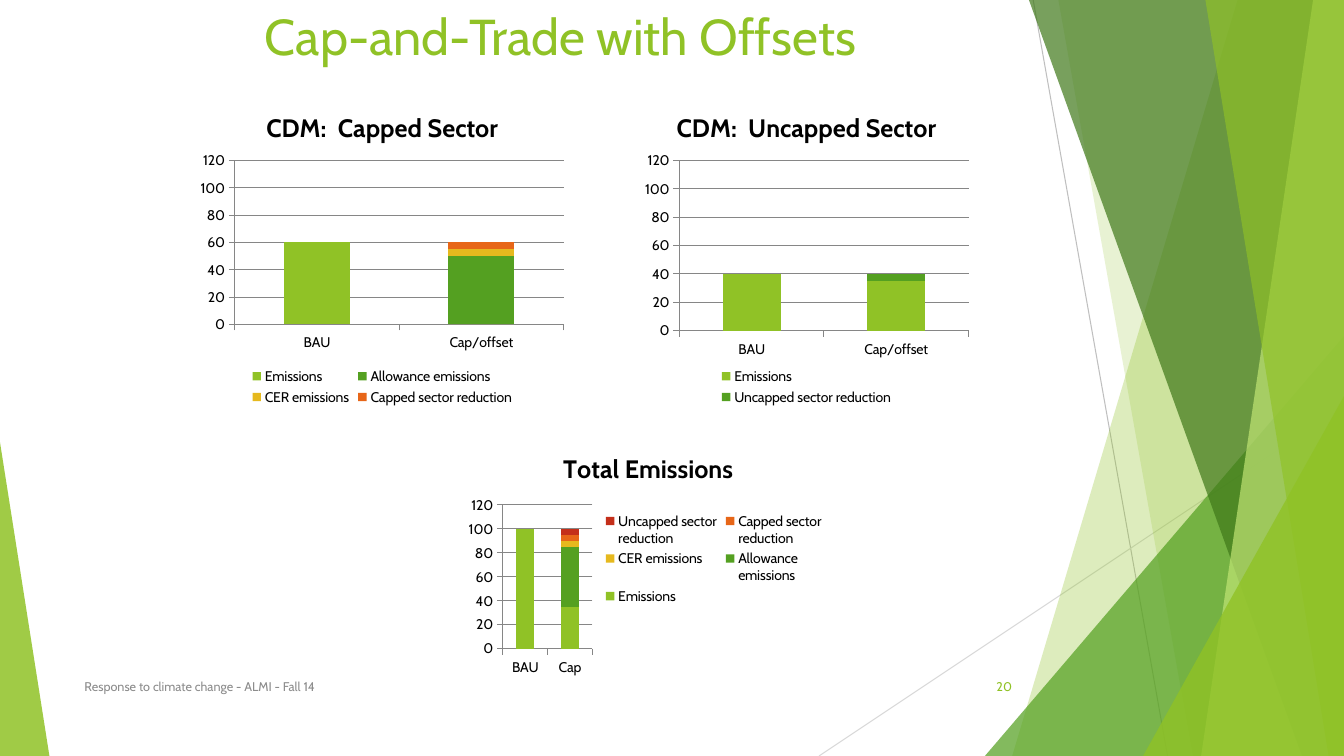
from lxml.etree import SubElement
from pptx import Presentation
from pptx.chart.data import CategoryChartData
from pptx.dml.color import RGBColor
from pptx.enum.chart import XL_CHART_TYPE as ChartType
from pptx.enum.chart import XL_LEGEND_POSITION as LegendPos
from pptx.enum.chart import XL_TICK_MARK as Tick
from pptx.enum.shapes import MSO_CONNECTOR as Connector
from pptx.enum.shapes import MSO_SHAPE as Shape
from pptx.enum.text import MSO_ANCHOR as Anchor
from pptx.enum.text import MSO_AUTO_SIZE as AutoSize
from pptx.enum.text import PP_ALIGN as Align
from pptx.oxml import parse_xml
from pptx.oxml.ns import qn
from pptx.util import Pt


class Theme:
    font = "Cabin"
    lime, green, forest, pale = "90C226", "54A021", "3F7819", "C0E474"
    gold, orange, red = "E6B91E", "E76618", "C42F1A"
    ink, footer, axis = "000000", "8C8C8C", "868686"
    ray_dark, ray_light = "BFBFBF", "D9D9D9"
    title_size, chart_title_size, chart_size, footer_size = 36, 18, 10, 9


WIDTH, HEIGHT = 960, 540
TITLE = ("Cap-and-Trade with Offsets", (182, 0, 486, 67.5))
FOOTER = ("Response to climate change - ALMI - Fall 14", (53.3, 476, 496, 28.8))
PAGE = ("20", (676, 476, 54, 28.8))

SERIES_COLORS = {
    "Emissions": Theme.lime,
    "Allowance emissions": Theme.green,
    "CER emissions": Theme.gold,
    "Capped sector reduction": Theme.orange,
    "Uncapped sector reduction": Theme.red,
}
# plot is in fractions of the chart: left, top, width, height
CHARTS = [
    dict(title="CDM:  Uncapped Sector", box=(450, 67.5, 252, 225),
         categories=("BAU", "Cap/offset"),
         series={"Emissions": (40, 35), "Uncapped sector reduction": (0, 5)},
         colors={"Uncapped sector reduction": Theme.green},
         plot=(0.14, 0.21, 0.82, 0.54), legend_side=LegendPos.BOTTOM),
    dict(title="CDM:  Capped Sector", box=(138, 67.5, 270, 225),
         categories=("BAU", "Cap/offset"),
         series={"Emissions": (60, 0), "Allowance emissions": (0, 50),
                 "CER emissions": (0, 5), "Capped sector reduction": (0, 5)},
         colors={},
         plot=(0.11, 0.21, 0.87, 0.52), legend_side=LegendPos.BOTTOM),
    dict(title="Total Emissions", box=(330, 312, 266, 174),
         categories=("BAU", "Cap"),
         series={"Emissions": (100, 35), "Allowance emissions": (0, 50),
                 "CER emissions": (0, 5), "Capped sector reduction": (0, 5),
                 "Uncapped sector reduction": (0, 5)},
         colors={},
         plot=(0.11, 0.28, 0.24, 0.59), legend_side=LegendPos.RIGHT),
]

RAYS = [((738, 0), (834, HEIGHT), Theme.ray_dark),
        ((WIDTH, 290), (585, HEIGHT), Theme.ray_light)]
# A band runs from its slanted left edge (top x, bottom x) to the right slide edge;
# a wedge is a right triangle on the bottom edge (left, top, width, apex position).
FACETS = [
    ("band", (884, 723), Theme.lime, 30),
    ("band", (756, 852), Theme.lime, 20),
    ("wedge", (703.5, 240, 256.5, 1), Theme.green, 72),
    ("band", (735, 929.5), Theme.forest, 70),
    ("band", (938, 858), Theme.pale, 70),
    ("band", (861, 949), Theme.lime, 65),
    ("wedge", (816.5, 283, 143.5, 1), Theme.lime, 80),
    ("wedge", (0, 316, 35.3, 0), Theme.lime, 85),
]


def rgb(code):
    return RGBColor.from_string(code)


def points(values):
    return [Pt(value) for value in values]


def set_font(font, size, color, bold=False):
    font.name, font.size, font.bold = Theme.font, Pt(size), bold
    font.color.rgb = rgb(color)


def add_ray(slide, start, end, color):
    ray = slide.shapes.add_connector(Connector.STRAIGHT, *points(start + end))
    ray.line.color.rgb, ray.line.width = rgb(color), Pt(0.75)
    SubElement(ray._element.spPr, qn("a:effectLst"))


def add_facet(slide, kind, geometry, color, opacity):
    if kind == "band":
        top_x, bottom_x = geometry
        builder = slide.shapes.build_freeform(top_x, 0, scale=Pt(1))
        builder.add_line_segments([(WIDTH, 0), (WIDTH, HEIGHT), (bottom_x, HEIGHT)])
        facet = builder.convert_to_shape()
    else:
        left, top, width, apex = geometry
        facet = slide.shapes.add_shape(
            Shape.ISOSCELES_TRIANGLE, *points((left, top, width, HEIGHT - top)))
        facet.adjustments[0] = apex
    facet.shadow.inherit = False
    facet.line.fill.background()
    facet.fill.solid()
    facet.fill.fore_color.rgb = rgb(color)
    solid = facet._element.spPr.find(qn("a:solidFill"))
    SubElement(solid[0], qn("a:alpha"), val=str(opacity * 1000))


def write(holder, text, size, color, anchor, align=Align.LEFT):
    frame = holder.text_frame
    frame.word_wrap, frame.auto_size = True, AutoSize.NONE
    frame.vertical_anchor = anchor
    line = frame.paragraphs[0]
    line.alignment = align
    run = line.add_run()
    run.text = text
    set_font(run.font, size, color)


def place_plot(chart, box):
    """Fix the inner plot area at box, in fractions of the chart."""
    area = chart._chartSpace.find(qn("c:chart")).find(qn("c:plotArea"))
    old = area.find(qn("c:layout"))
    if old is not None:
        area.remove(old)
    layout = parse_xml('<c:layout xmlns:c="http://schemas.openxmlformats.org/'
                       'drawingml/2006/chart"><c:manualLayout/></c:layout>')
    for tag, value in [("layoutTarget", "inner"), ("xMode", "edge"),
                       ("yMode", "edge"), *zip("xywh", box)]:
        SubElement(layout[0], qn(f"c:{tag}"), val=str(value))
    area.insert(0, layout)


def add_stacked_chart(slide, title, box, categories, series, colors,
                      plot, legend_side):
    chart_data = CategoryChartData()
    chart_data.categories = categories
    for name, values in series.items():
        chart_data.add_series(name, values)
    chart = slide.shapes.add_chart(
        ChartType.COLUMN_STACKED, *points(box), chart_data).chart
    set_font(chart.font, Theme.chart_size, Theme.ink)

    chart.has_title = True
    heading = chart.chart_title.text_frame.paragraphs[0].add_run()
    heading.text = title
    set_font(heading.font, Theme.chart_title_size, Theme.ink, bold=True)
    chart.chart_title.include_in_layout = False

    columns = chart.plots[0]
    columns.gap_width, columns.overlap = 150, 100
    columns.vary_by_categories = False
    for bar in columns.series:
        bar.format.fill.solid()
        bar.format.fill.fore_color.rgb = rgb((SERIES_COLORS | colors)[bar.name])

    scale = chart.value_axis
    scale.minimum_scale, scale.maximum_scale, scale.major_unit = 0, 120, 20
    scale.has_major_gridlines = True
    lines = [scale.major_gridlines.format.line]
    for axis in (scale, chart.category_axis):
        axis.major_tick_mark, axis.minor_tick_mark = Tick.OUTSIDE, Tick.NONE
        lines.append(axis.format.line)
    for line in lines:
        line.color.rgb, line.width = rgb(Theme.axis), Pt(0.75)

    chart.has_legend = True
    chart.legend.position = legend_side
    chart.legend.include_in_layout = False
    place_plot(chart, plot)


def main():
    deck = Presentation()
    deck.slide_width, deck.slide_height = Pt(WIDTH), Pt(HEIGHT)
    slide = deck.slides.add_slide(deck.slide_layouts[5])
    for ray in RAYS:
        add_ray(slide, *ray)
    for facet in FACETS:
        add_facet(slide, *facet)

    text, box = TITLE
    title = slide.shapes.title
    title.left, title.top, title.width, title.height = points(box)
    write(title, text, Theme.title_size, Theme.lime, Anchor.TOP)
    for (text, box), color, align in ((FOOTER, Theme.footer, Align.LEFT),
                                      (PAGE, Theme.lime, Align.RIGHT)):
        write(slide.shapes.add_textbox(*points(box)), text, Theme.footer_size,
              color, Anchor.MIDDLE, align)
    for chart in CHARTS:
        add_stacked_chart(slide, **chart)
    deck.save("out.pptx")


if __name__ == "__main__":
    main()
